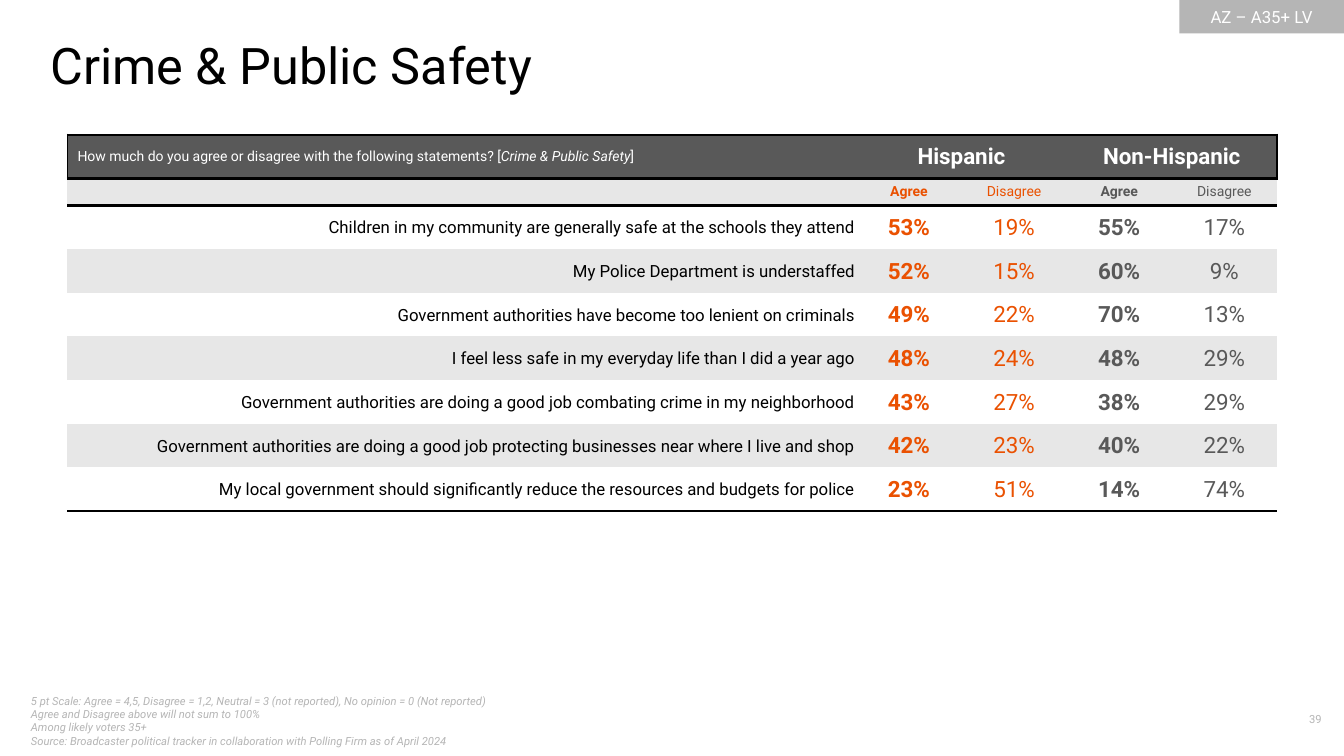
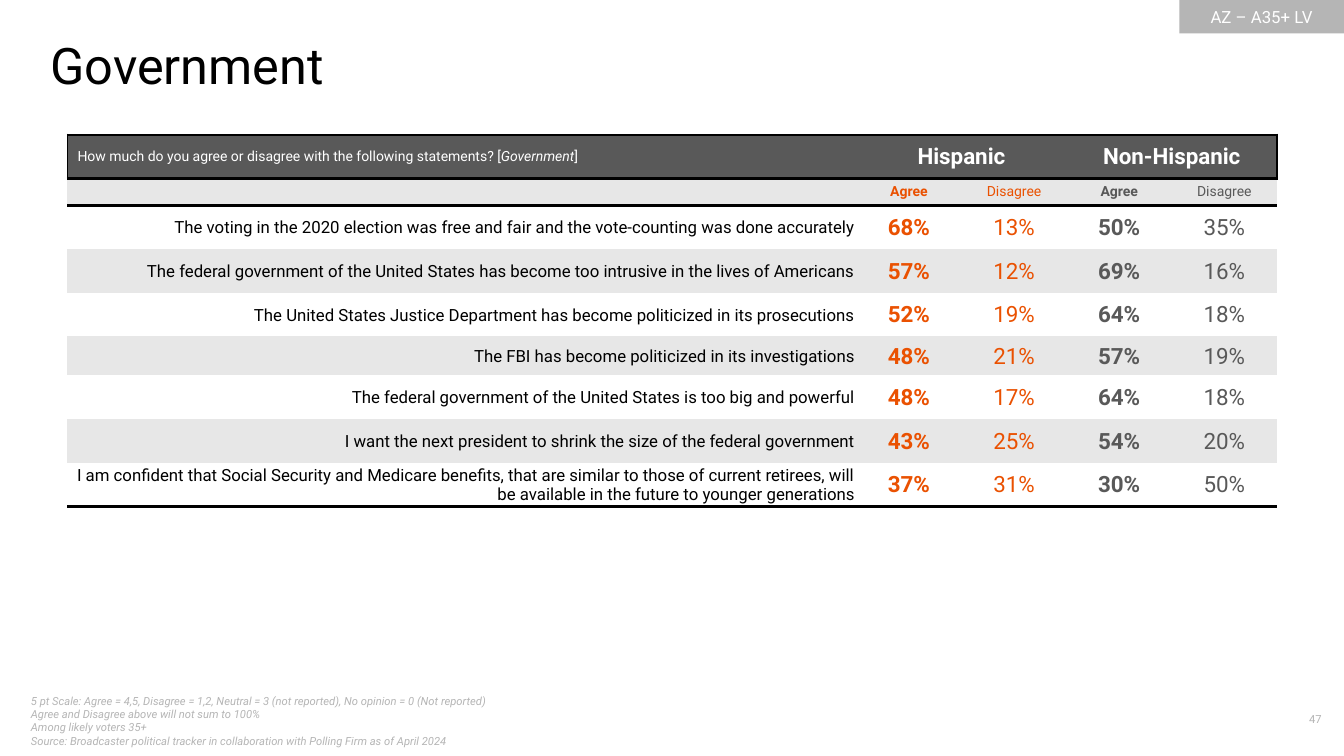
from dataclasses import dataclass

from lxml import etree
from pptx import Presentation
from pptx.dml.color import RGBColor
from pptx.enum import shapes, text
from pptx.oxml import ns
from pptx.util import Cm, Pt

LEFT, CENTER, RIGHT = text.PP_ALIGN.LEFT, text.PP_ALIGN.CENTER, text.PP_ALIGN.RIGHT
MIDDLE = text.MSO_ANCHOR.MIDDLE
NO_STYLE = "{2D5ABB26-0587-4C30-8999-92F81FD0307C}"


@dataclass(frozen=True)
class Theme:
    font: str = "Roboto"
    black: str = "000000"
    white: str = "FFFFFF"
    dark: str = "595959"
    band: str = "E7E7E7"
    muted: str = "B5B5B5"
    accent: str = "EA5101"
    title: int = 36
    figure: int = 16
    body: int = 12
    label: int = 10
    note: int = 8
    rule: float = 2.25
    side: float = 1


@dataclass(frozen=True)
class Statement:
    wording: str
    shares: tuple[int, int, int, int]
    height: float = 1.1


@dataclass(frozen=True)
class Topic:
    name: str
    page: int
    statements: tuple[Statement, ...]


T = Theme()
SLIDE_W, SLIDE_H = 33.87, 19.05
TABLE_X, TABLE_Y, TABLE_W = 1.7, 3.4, 30.48
SHARE_W = 2.65
HEADER_H, LABEL_H = 1.1, 0.64
GROUPS = (("Hispanic", T.accent), ("Non-Hispanic", T.dark))
ANSWERS = (("Agree", True), ("Disagree", False))
# Label, colour and weight of each share column
SHARE_COLUMNS = [(label, color, bold) for _, color in GROUPS for label, bold in ANSWERS]

NOTES = (
    "5 pt Scale: Agree = 4,5, Disagree = 1,2, Neutral = 3 (not reported), "
    "No opinion = 0 (Not reported)",
    "Agree and Disagree above will not sum to 100%",
    "Among likely voters 35+",
    "Source: Broadcaster political tracker in collaboration with Polling Firm as of April 2024",
)

TOPICS = (
    Topic("Crime & Public Safety", 39, (
        Statement("Children in my community are generally safe at the schools they attend",
                  (53, 19, 55, 17)),
        Statement("My Police Department is understaffed", (52, 15, 60, 9)),
        Statement("Government authorities have become too lenient on criminals",
                  (49, 22, 70, 13)),
        Statement("I feel less safe in my everyday life than I did a year ago",
                  (48, 24, 48, 29)),
        Statement("Government authorities are doing a good job combating crime "
                  "in my neighborhood", (43, 27, 38, 29)),
        Statement("Government authorities are doing a good job protecting businesses "
                  "near where I live and shop", (42, 23, 40, 22)),
        Statement("My local government should significantly reduce the resources "
                  "and budgets for police", (23, 51, 14, 74)),
    )),
    Topic("Government", 47, (
        Statement("The voting in the 2020 election was free and fair and the "
                  "vote-counting was done accurately", (68, 13, 50, 35)),
        Statement("The federal government of the United States has become too intrusive "
                  "in the lives of Americans", (57, 12, 69, 16)),
        Statement("The United States Justice Department has become politicized "
                  "in its prosecutions", (52, 19, 64, 18)),
        Statement("The FBI has become politicized in its investigations",
                  (48, 21, 57, 19), 0.98),
        Statement("The federal government of the United States is too big and powerful",
                  (48, 17, 64, 18)),
        Statement("I want the next president to shrink the size of the federal government",
                  (43, 25, 54, 20)),
        Statement("I am confident that Social Security and Medicare benefits, that are "
                  "similar to those of current retirees, will be available in the future "
                  "to younger generations", (37, 31, 30, 50)),
    )),
)


def add_text(p, content: str, *, size: float, color: str, bold: bool = False,
             italic: bool = False, align=LEFT) -> None:
    """Append one formatted run to a paragraph."""
    p.alignment = align
    r = p.add_run()
    r.text = content
    f = r.font
    f.name, f.size, f.bold, f.italic = T.font, Pt(size), bold, italic
    f.color.rgb = RGBColor.from_string(color)


def add_box(s, x: float, y: float, w: float, h: float):
    tf = s.shapes.add_textbox(Cm(x), Cm(y), Cm(w), Cm(h)).text_frame
    tf.word_wrap = True
    return tf


# Slide frame: title, tag, notes, page number
def add_frame(s, topic: Topic) -> None:
    title = s.shapes.title
    title.left, title.top, title.width, title.height = Cm(1.27), Cm(0.84), Cm(30.48), Cm(1.55)
    tf = title.text_frame
    tf.margin_left = tf.margin_right = tf.margin_top = tf.margin_bottom = 0
    tf.auto_size = text.MSO_AUTO_SIZE.NONE
    tf.vertical_anchor = MIDDLE
    add_text(tf.paragraphs[0], topic.name, size=T.title, color=T.black)

    tag_w = 4.15
    tag = s.shapes.add_shape(shapes.MSO_SHAPE.RECTANGLE, Cm(SLIDE_W - tag_w), 0,
                             Cm(tag_w), Cm(0.84))
    tag.shadow.inherit = False
    tag.fill.solid()
    tag.fill.fore_color.rgb = RGBColor.from_string(T.muted)
    tag.line.fill.background()
    tag.text_frame.vertical_anchor = MIDDLE
    add_text(tag.text_frame.paragraphs[0], "AZ – A35+ LV", size=T.body, color=T.white,
             align=CENTER)

    tf = add_box(s, 0.53, 17.65, 12.98, 1.02)
    tf.vertical_anchor = MIDDLE
    for i, note in enumerate(NOTES):
        p = tf.add_paragraph() if i else tf.paragraphs[0]
        add_text(p, note, size=T.note, color=T.muted, italic=True)

    tf = add_box(s, 31.32, 17.83, 2.24, 0.69)
    add_text(tf.paragraphs[0], str(topic.page), size=T.note, color=T.muted, align=RIGHT)


# Table cells
def style_cell(cell, fill: str, *, margin: float | None = None, **borders: float):
    """Fill a cell, draw borders given as L, R, T, B widths; return its paragraph."""
    tc_pr = cell._tc.get_or_add_tcPr()
    for side in "LRTB":
        if side in borders:
            ln = etree.SubElement(tc_pr, ns.qn(f"a:ln{side}"), w=str(Pt(borders[side])))
            solid = etree.SubElement(ln, ns.qn("a:solidFill"))
            etree.SubElement(solid, ns.qn("a:srgbClr"), val=T.black)
    cell.fill.solid()
    cell.fill.fore_color.rgb = RGBColor.from_string(fill)
    cell.vertical_anchor = MIDDLE
    if margin is not None:
        cell.margin_left = cell.margin_right = cell.margin_top = Cm(margin)
        cell.margin_bottom = 0
    return cell.text_frame.paragraphs[0]


def add_header(table, topic: Topic) -> None:
    last = len(SHARE_COLUMNS)
    paragraphs = []
    for col in range(last + 1):
        sides = {"L": T.side} if col == 0 else {"R": T.side} if col == last else {}
        paragraphs.append(style_cell(table.cell(0, col), T.dark, T=T.rule, B=T.rule, **sides))
    question = (("How much do you agree or disagree with the following statements? [", False),
                (topic.name, True), ("]", False))
    for part, italic in question:
        add_text(paragraphs[0], part, size=T.label, color=T.white, italic=italic)
    for i, (group, _) in enumerate(GROUPS):
        col = 1 + i * len(ANSWERS)
        end = col + len(ANSWERS) - 1
        table.cell(0, col).merge(table.cell(0, end))
        if end == last:
            style_cell(table.cell(0, col), T.dark, R=T.side)
        add_text(paragraphs[col], group, size=T.figure, color=T.white, bold=True, align=CENTER)


def add_labels(table) -> None:
    # The blank cell needs a small type size so that the row stays low
    blank = style_cell(table.cell(1, 0), T.band, T=T.rule)
    etree.SubElement(blank._p, ns.qn("a:endParaRPr"), sz=str(T.label * 100))
    for col, (label, color, bold) in enumerate(SHARE_COLUMNS, 1):
        cell = table.cell(1, col)
        p = style_cell(cell, T.band, T=T.rule)
        cell.margin_top = cell.margin_bottom = Cm(0.1)
        add_text(p, label, size=T.label, color=color, bold=bold, align=CENTER)


def add_statements(table, statements: tuple[Statement, ...]) -> None:
    for i, st in enumerate(statements):
        fill = T.band if i % 2 else T.white
        borders = {"B": T.rule} if i == len(statements) - 1 else {}
        cells = table.rows[i + 2].cells
        paragraphs = [style_cell(c, fill, margin=0.03, **borders) for c in cells]
        add_text(paragraphs[0], st.wording, size=T.body, color=T.black, align=RIGHT)
        for p, share, (_, color, bold) in zip(paragraphs[1:], st.shares, SHARE_COLUMNS):
            add_text(p, f"{share}%", size=T.figure, color=color, bold=bold, align=CENTER)


def add_survey_table(s, topic: Topic) -> None:
    heights = [HEADER_H, LABEL_H] + [st.height for st in topic.statements]
    widths = [TABLE_W - SHARE_W * len(SHARE_COLUMNS)] + [SHARE_W] * len(SHARE_COLUMNS)
    table = s.shapes.add_table(len(heights), len(widths), Cm(TABLE_X), Cm(TABLE_Y),
                               Cm(TABLE_W), Cm(sum(heights))).table
    table.first_row = table.horz_banding = False
    table._tbl.tblPr.find(ns.qn("a:tableStyleId")).text = NO_STYLE
    for row, height in zip(table.rows, heights):
        row.height = Cm(height)
    for column, width in zip(table.columns, widths):
        column.width = Cm(width)
    add_header(table, topic)
    add_labels(table)
    add_statements(table, topic.statements)


def main() -> None:
    prs = Presentation()
    prs.slide_width, prs.slide_height = Cm(SLIDE_W), Cm(SLIDE_H)
    for topic in TOPICS:
        s = prs.slides.add_slide(prs.slide_layouts.get_by_name("Title Only"))
        add_frame(s, topic)
        add_survey_table(s, topic)
    prs.save("out.pptx")


if __name__ == "__main__":
    main()
